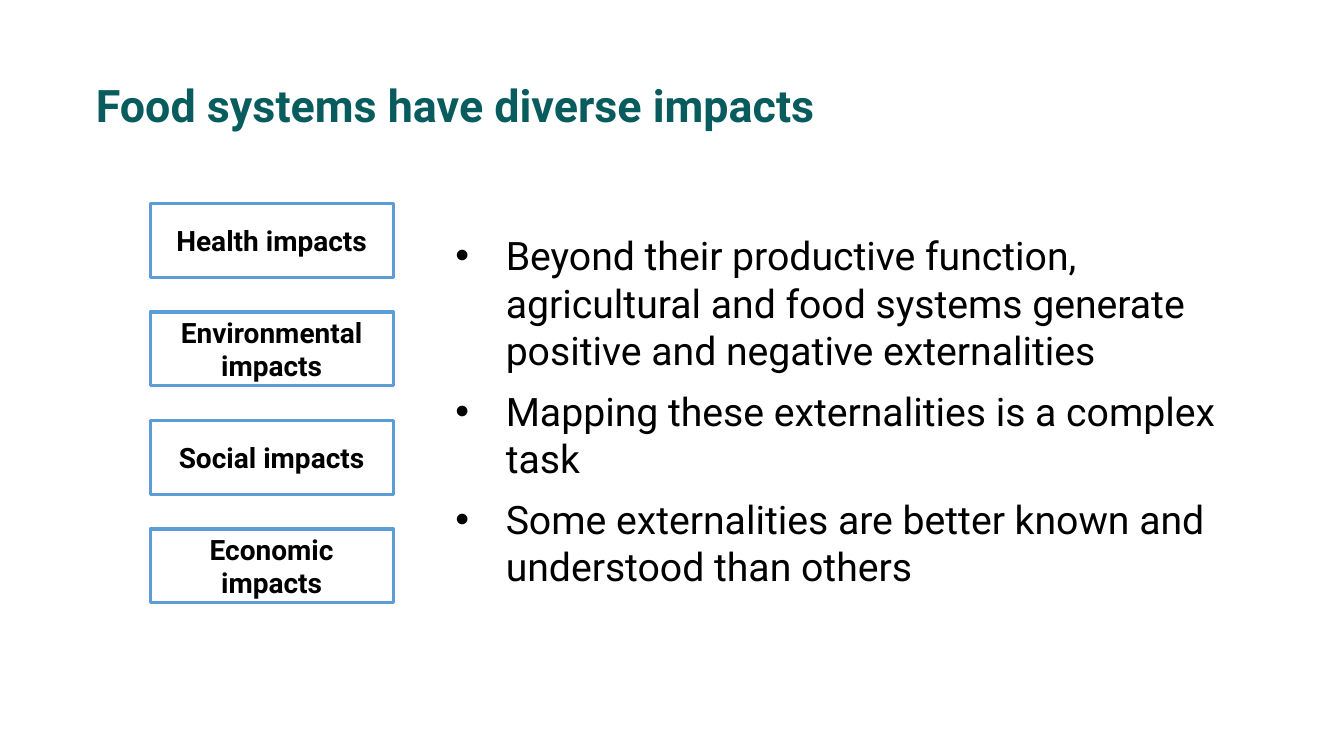
from lxml import etree
from pptx import Presentation
from pptx.dml.color import RGBColor
from pptx.enum import shapes, text
from pptx.oxml import ns
from pptx.util import Pt

FONT = "Roboto"
TEAL = RGBColor(0x08, 0x5C, 0x5D)
BLUE = RGBColor(0x5C, 0x9C, 0xD7)
BLACK = RGBColor(0, 0, 0)

TITLE = "Food systems have diverse impacts"
IMPACTS = ["Health impacts", "Environmental impacts", "Social impacts", "Economic impacts"]
POINTS = [
    "Beyond their productive function, agricultural and food systems generate "
    "positive and negative externalities",
    "Mapping these externalities is a complex task",
    "Some externalities are better known and understood than others",
]


def style_font(paragraph, size, color, bold=False):
    for run in paragraph.runs:
        run.font.name = FONT
        run.font.size = Pt(size)
        run.font.bold = bold
        run.font.color.rgb = color


def add_bullet(paragraph, indent):
    properties = paragraph._p.get_or_add_pPr()
    properties.set("marL", str(Pt(indent)))
    properties.set("indent", str(-Pt(indent)))
    etree.SubElement(properties, ns.qn("a:buFont")).set("typeface", "Arial")
    etree.SubElement(properties, ns.qn("a:buChar")).set("char", "•")


def place_title(slide, left, top, width, height):
    title = slide.shapes.title
    title.left, title.top, title.width, title.height = map(Pt, (left, top, width, height))
    frame = title.text_frame
    frame.text = TITLE
    frame.word_wrap = True
    frame.auto_size = text.MSO_AUTO_SIZE.NONE
    frame.vertical_anchor = text.MSO_ANCHOR.TOP
    paragraph = frame.paragraphs[0]
    paragraph.alignment = text.PP_ALIGN.LEFT
    style_font(paragraph, 32, TEAL, bold=True)


def add_impacts(slide, left, top, width, height, gap=24.9):
    box_height = (height - gap * (len(IMPACTS) - 1)) / len(IMPACTS)
    for row, label in enumerate(IMPACTS):
        box_top = top + row * (box_height + gap)
        box = slide.shapes.add_shape(
            shapes.MSO_SHAPE.RECTANGLE, Pt(left), Pt(box_top), Pt(width), Pt(box_height)
        )
        box.shadow.inherit = False
        box.fill.background()
        box.line.color.rgb = BLUE
        box.line.width = Pt(2.25)
        frame = box.text_frame
        frame.text = label
        frame.word_wrap = True
        frame.vertical_anchor = text.MSO_ANCHOR.MIDDLE
        paragraph = frame.paragraphs[0]
        paragraph.alignment = text.PP_ALIGN.CENTER
        style_font(paragraph, 20, BLACK, bold=True)


def add_points(slide, left, top, width, height):
    frame = slide.shapes.add_textbox(Pt(left), Pt(top), Pt(width), Pt(height)).text_frame
    frame.word_wrap = True
    frame.text = "\n".join(POINTS)
    for row, paragraph in enumerate(frame.paragraphs):
        if row:
            paragraph.space_before = Pt(10)
        add_bullet(paragraph, 36)
        style_font(paragraph, 28, BLACK)


def main():
    presentation = Presentation()
    presentation.slide_width, presentation.slide_height = Pt(960), Pt(540)
    slide = presentation.slides.add_slide(presentation.slide_layouts[5])
    place_title(slide, 61.2, 51.8, 833, 96.5)
    add_points(slide, 318.2, 162, 582.5, 260.6)
    add_impacts(slide, 107.3, 145.4, 173.5, 285.1)
    presentation.save("out.pptx")


if __name__ == "__main__":
    main()
